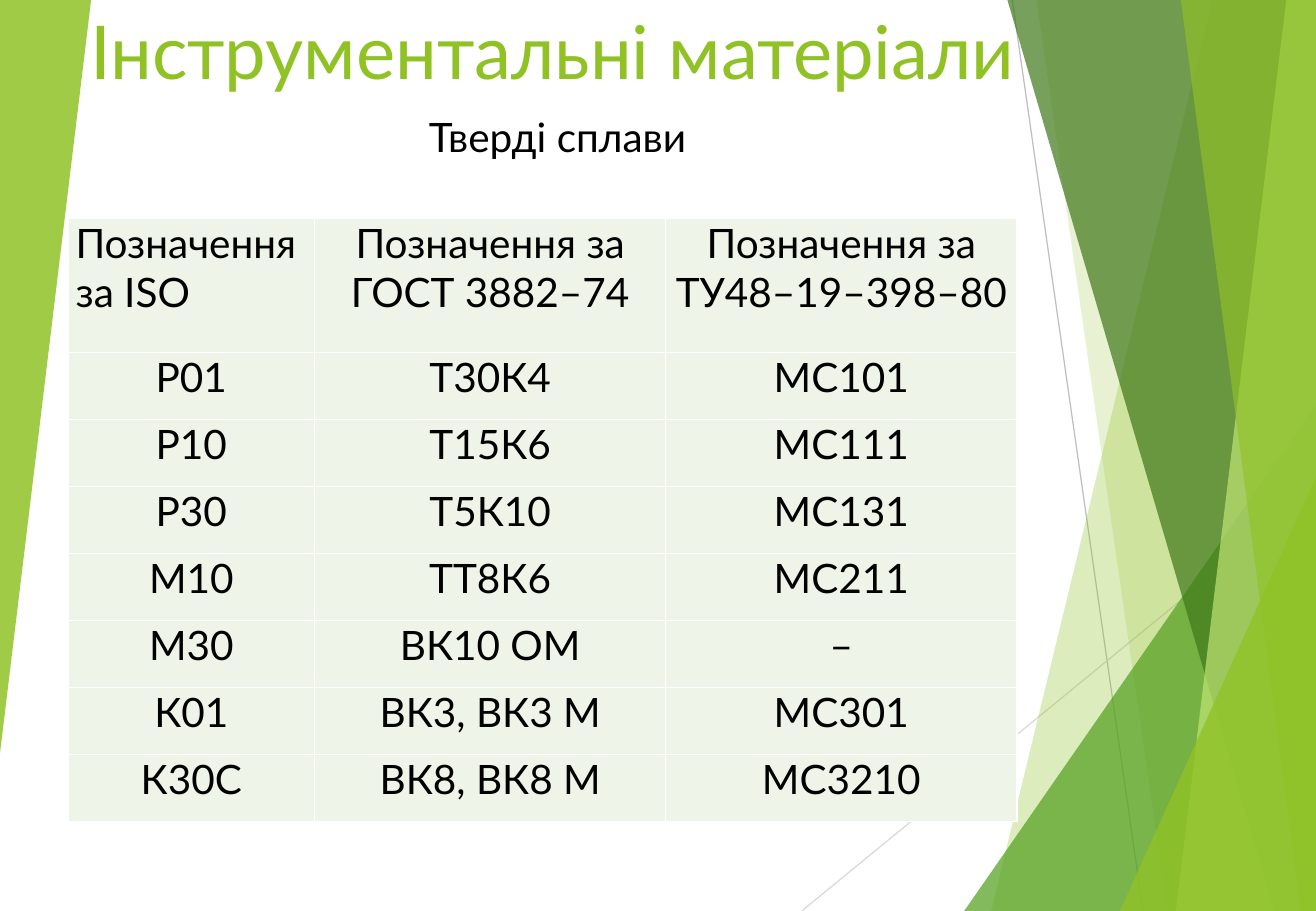
import pptx
import pptx.util
import pptx.dml.color
import pptx.enum.shapes
import pptx.enum.text
import pptx.oxml.ns
import lxml.etree

Pt = pptx.util.Pt
Align = pptx.enum.text.PP_ALIGN
Anchor = pptx.enum.text.MSO_ANCHOR
qn = pptx.oxml.ns.qn
Sub = lxml.etree.SubElement

WIDE, HIGH = 780, 540
FONT = "Lato"
LIME, BLACK, WHITE, PALE = "90C226", "000000", "FFFFFF", "EEF4E8"

title = ("Інструментальні матеріали", (37.4, 5, 571.7, 54.7), 44, LIME, Align.RIGHT, Anchor.BOTTOM, 0)
lead = ("Тверді сплави", (48.2, 62.6, 564.5, 43.9), 24, BLACK, Align.CENTER, Anchor.TOP, 10)

rays = [((600, 0), (677.5, HIGH), "BFBFBF"), ((WIDE, 290.2), (475.2, HIGH), "D9D9D9")]

panels = [
    ("facet", (718.6, 587.5), LIME, 30),
    ("facet", (614.2, 691.9), LIME, 20),
    ("wedge", (571.5, 239.8, 208.5, 300.2, 0), "54A021", 72),
    ("facet", (596.9, 755.3), "3F7819", 70),
    ("facet", (762.5, 697), "C0E474", 70),
    ("facet", (699.8, 771.1), LIME, 65),
    ("wedge", (663.8, 283, 116.2, 257, 0), LIME, 80),
    ("wedge", (0, 0, 54, 446.4, 180), LIME, 85),
]

rows = [
    ("Позначення за ISO", "Позначення за ГОСТ 3882–74", "Позначення за ТУ48–19–398–80"),
    ("Р01", "Т30К4", "МС101"),
    ("Р10", "Т15К6", "МС111"),
    ("Р30", "Т5К10", "МС131"),
    ("М10", "ТТ8К6", "МС211"),
    ("М30", "ВК10 ОМ", "–"),
    ("К01", "ВК3, ВК3 М", "МС301"),
    ("К30С", "ВК8, ВК8 М", "МС3210"),
]
widths = (146.2, 208.1, 208.1)
tall = 39.7
heights = [2 * tall] + [tall] * (len(rows) - 1)


def paint(part, color):
    part.solid()
    part.fore_color.rgb = pptx.dml.color.RGBColor.from_string(color)


def style(para, size, color, align):
    para.alignment = align
    for run in para.runs:
        run.font.name = FONT
        run.font.size = Pt(size)
        paint(run.font.fill, color)


def draw_ray(shapes, start, end, color):
    ray = shapes.add_connector(
        pptx.enum.shapes.MSO_CONNECTOR.STRAIGHT, *[Pt(n) for n in start + end])
    paint(ray.line.fill, color)
    ray.line.width = Pt(0.75)
    Sub(ray._element.spPr, qn("a:effectLst"))


def draw_panel(shapes, kind, place, color, alpha):
    if kind == "facet":
        top, foot = place
        rim = -0.72
        pen = shapes.build_freeform(Pt(top), Pt(rim))
        ends = [(WIDE, rim), (WIDE, HIGH), (foot, HIGH)]
        pen.add_line_segments([(Pt(x), Pt(y)) for x, y in ends], close=True)
        panel = pen.convert_to_shape()
    else:
        panel = shapes.add_shape(
            pptx.enum.shapes.MSO_SHAPE.ISOSCELES_TRIANGLE, *[Pt(n) for n in place[:4]])
        panel.adjustments[0] = 1
        panel.rotation = place[4]
    panel.shadow.inherit = False
    panel.line.fill.background()
    paint(panel.fill, color)
    tint = panel._element.spPr.find(qn("a:solidFill"))[0]
    Sub(tint, qn("a:alpha"), val=str(alpha * 1000))


def draw_text(shapes, text, place, size, color, align, anchor, gap):
    frame = shapes.add_textbox(*[Pt(n) for n in place]).text_frame
    frame.word_wrap = True
    frame.vertical_anchor = anchor
    frame.text = text
    para = frame.paragraphs[0]
    para.space_before = Pt(gap)
    style(para, size, color, align)


def edge_cell(cell):
    props = cell._tc.get_or_add_tcPr()
    for spot, side in enumerate("LRTB"):
        line = Sub(props, qn("a:ln" + side), w=str(int(Pt(1))))
        Sub(Sub(line, qn("a:solidFill")), qn("a:srgbClr"), val=WHITE)
        props.insert(spot, line)


def draw_table(shapes):
    grid = shapes.add_table(
        len(rows), len(widths), Pt(40.3), Pt(129.6), Pt(sum(widths)), Pt(sum(heights))).table
    for col, width in zip(grid.columns, widths):
        col.width = Pt(width)
    for row, height in zip(grid.rows, heights):
        row.height = Pt(height)
    for r, row in enumerate(rows):
        for c, text in enumerate(row):
            cell = grid.cell(r, c)
            cell.text = text
            cell.margin_left = cell.margin_right = Pt(4.5)
            cell.margin_top = cell.margin_bottom = Pt(0)
            align = Align.JUSTIFY if r == c == 0 else Align.CENTER
            style(cell.text_frame.paragraphs[0], 24, BLACK, align)
            paint(cell.fill, PALE)
            edge_cell(cell)


def main():
    deck = pptx.Presentation()
    deck.slide_width, deck.slide_height = Pt(WIDE), Pt(HIGH)
    slide = deck.slides.add_slide(deck.slide_layouts[6])
    paint(slide.background.fill, WHITE)
    for ray in rays:
        draw_ray(slide.shapes, *ray)
    for panel in panels:
        draw_panel(slide.shapes, *panel)
    for label in (title, lead):
        draw_text(slide.shapes, *label)
    draw_table(slide.shapes)
    deck.save("out.pptx")


if __name__ == "__main__":
    main()
